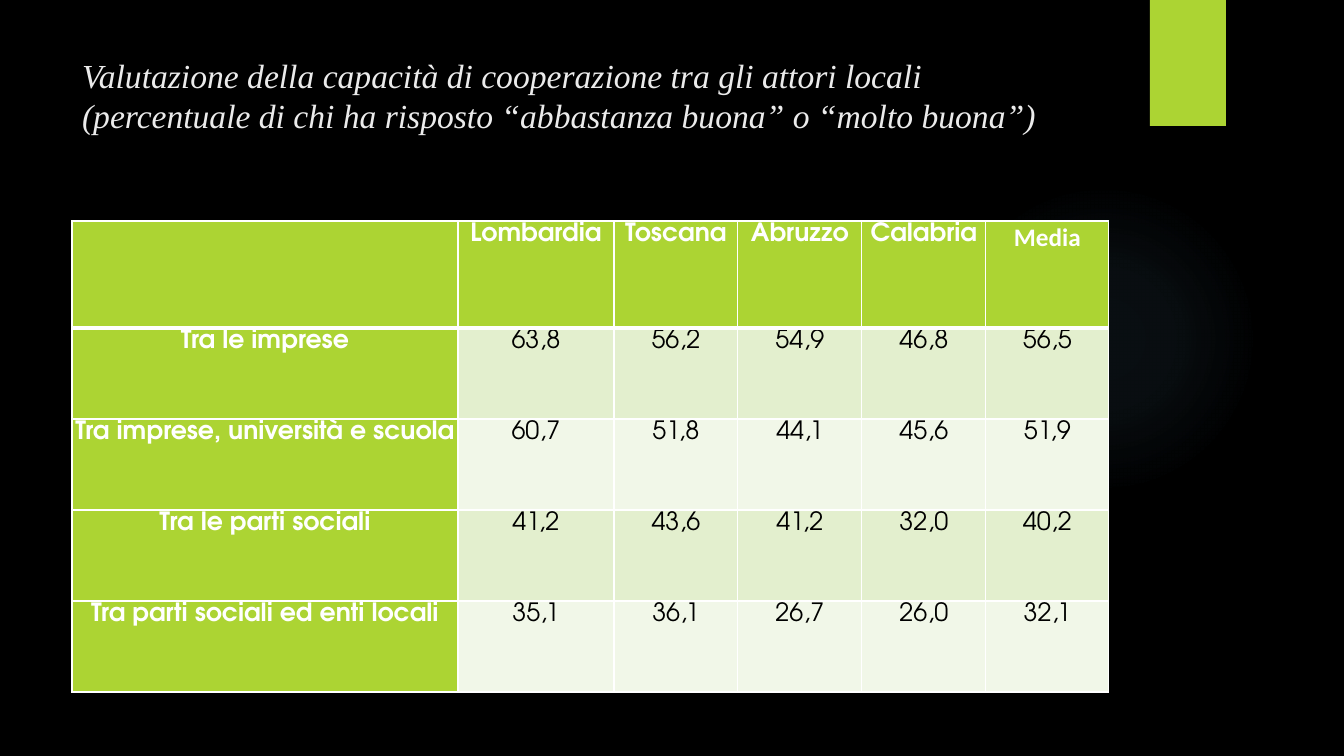
import pptx
import pptx.util
import pptx.oxml
import pptx.oxml.ns
import pptx.dml.color
import pptx.enum.shapes
import pptx.enum.text

RGB = pptx.dml.color.RGBColor
BLACK = RGB(0x00, 0x00, 0x00)
WHITE = RGB(0xFF, 0xFF, 0xFF)
PALE = RGB(0xEB, 0xEB, 0xEB)
LIME = RGB(0xAC, 0xD4, 0x33)
BANDS = [RGB(0xE3, 0xEF, 0xCE), RGB(0xF1, 0xF7, 0xE8)]
SKY = RGB(0x7A, 0xC4, 0xF0)
NS = pptx.oxml.ns.nsdecls("a")
Pt = pptx.util.Pt
KIND = pptx.enum.shapes.MSO_SHAPE
ALIGN = pptx.enum.text.PP_ALIGN


def px(*sizes):
    return [round(size * 914400 / 100.8) for size in sizes]


def style(font, name, size, color):
    font.name = name
    font.size = Pt(size)
    font.color.rgb = color


deck = pptx.Presentation()
deck.slide_width, deck.slide_height = px(1344, 756)
slide = deck.slides.add_slide(deck.slide_layouts[5])
slide.background.fill.solid()
slide.background.fill.fore_color.rgb = BLACK
shapes = slide.shapes

glow = shapes.add_shape(KIND.OVAL, *px(949, 184, 310, 310))
glow.shadow.inherit = False
glow.line.fill.background()
stops = "".join(
    f'<a:gs pos="{pos}000"><a:srgbClr val="{SKY}"><a:alpha val="{alpha}000"/></a:srgbClr></a:gs>'
    for pos, alpha in [(0, 7), (36, 6), (69, 0)])
glow.fill.background()
blank = glow.element.spPr.find(pptx.oxml.ns.qn("a:noFill"))
glow.element.spPr.replace(blank, pptx.oxml.parse_xml(
    f'<a:gradFill {NS}><a:gsLst>{stops}</a:gsLst><a:path path="circle">'
    '<a:fillToRect l="50000" t="50000" r="50000" b="50000"/></a:path></a:gradFill>'))

tab = shapes.add_shape(KIND.RECTANGLE, *px(1150, 0, 76, 126))
tab.shadow.inherit = False
tab.fill.solid()
tab.fill.fore_color.rgb = LIME
tab.line.fill.background()

title = shapes.title
title.left, title.top, title.width, title.height = px(72, 50, 1037, 154)
frame = title.text_frame
frame.text = ("Valutazione della capacità di cooperazione tra gli attori locali "
              "(percentuale di chi ha risposto “abbastanza buona” o “molto buona”)")
frame.word_wrap = True
frame.auto_size = pptx.enum.text.MSO_AUTO_SIZE.NONE
frame.vertical_anchor = pptx.enum.text.MSO_ANCHOR.TOP
head = frame.paragraphs[0]
head.alignment = ALIGN.LEFT
style(head.font, "Times New Roman", 24, PALE)
head.font.italic = True

rows = [
    ["", "Lombardia", "Toscana", "Abruzzo", "Calabria", "Media"],
    ["Tra le imprese", "63,8", "56,2", "54,9", "46,8", "56,5"],
    ["Tra imprese, università e scuola", "60,7", "51,8", "44,1", "45,6", "51,9"],
    ["Tra le parti sociali", "41,2", "43,6", "41,2", "32,0", "40,2"],
    ["Tra parti sociali ed enti locali", "35,1", "36,1", "26,7", "26,0", "32,1"],
]
widths = px(386, 156, 124, 124, 124, 123)
heights = px(107, 91, 91, 91, 91)
table = shapes.add_table(len(rows), len(widths), *px(72, 221, 1037, 471)).table
for column, width in zip(table.columns, widths):
    column.width = width
for line, height in zip(table.rows, heights):
    line.height = height

for r, row in enumerate(rows):
    for c, text in enumerate(row):
        cell = table.cell(r, c)
        label = r == 0 or c == 0
        cell.margin_left = cell.margin_right = cell.margin_top = cell.margin_bottom = px(2)[0]
        for side in "LRTB":
            thick = (r, side) in [(0, "B"), (1, "T")]
            cell._tc.get_or_add_tcPr().append(pptx.oxml.parse_xml(
                f'<a:ln{side} {NS} w="{Pt(3 if thick else 1)}"><a:solidFill>'
                f'<a:srgbClr val="{WHITE}"/></a:solidFill></a:ln{side}>'))
        cell.fill.solid()
        cell.fill.fore_color.rgb = LIME if label else BANDS[(r - 1) % 2]
        cell.text = text
        para = cell.text_frame.paragraphs[0]
        para.alignment = ALIGN.CENTER
        face = "Calibri" if text == "Media" else "TeX Gyre Adventor"
        style(para.font, face, 18, WHITE if label else BLACK)
        para.font.bold = label

deck.save("out.pptx")
